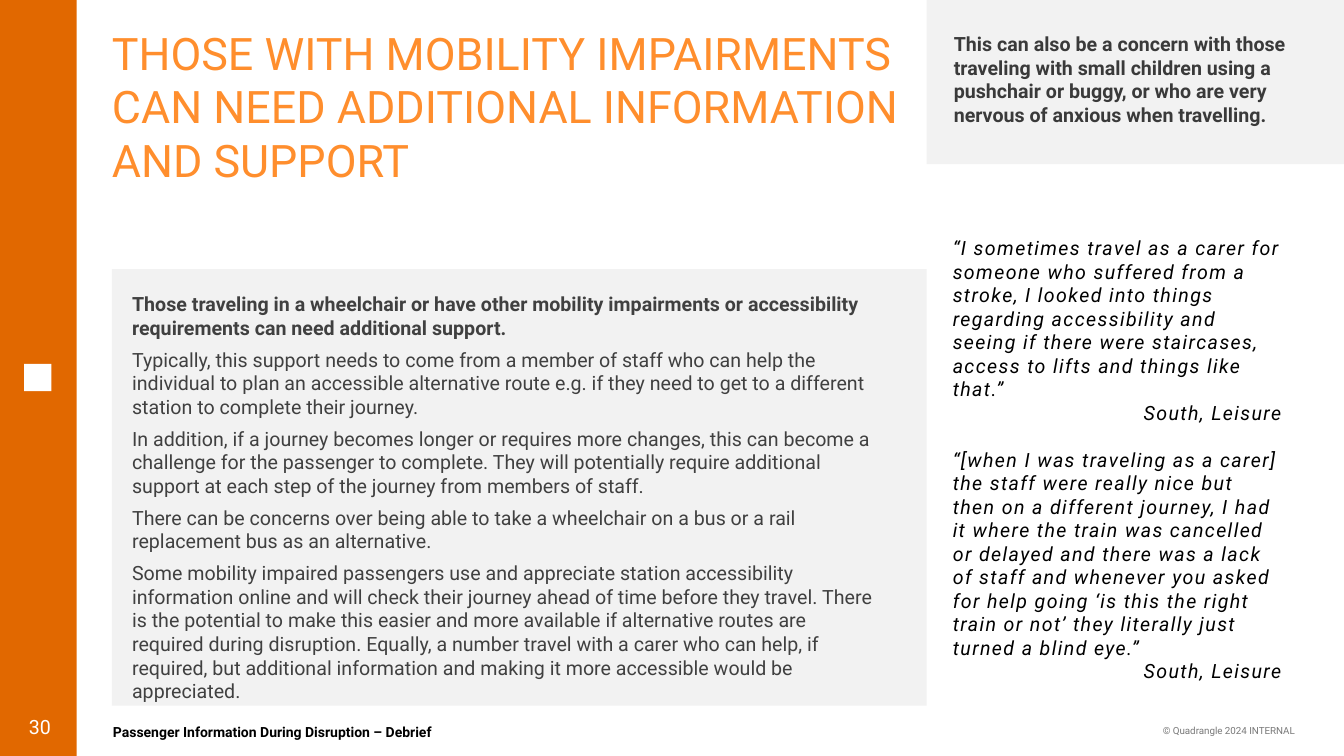
from pptx import Presentation
from pptx.dml.color import RGBColor
from pptx.enum.shapes import MSO_SHAPE
from pptx.enum.text import MSO_ANCHOR, PP_ALIGN
from pptx.util import Inches, Pt

FONT = "Roboto"
COLORS = {
    "orange": "E16800", "title": "FF8E2D", "panel": "F2F2F2", "white": "FFFFFF",
    "black": "000000", "body": "404040", "aside": "3A3A3A", "grey": "797979",
}

TITLE = "THOSE WITH MOBILITY IMPAIRMENTS CAN NEED ADDITIONAL INFORMATION AND SUPPORT"
LEAD = ("Those traveling in a wheelchair or have other mobility impairments or "
        "accessibility requirements can need additional support.")
BODY = [
    "Typically, this support needs to come from a member of staff who can help the "
    "individual to plan an accessible alternative route e.g. if they need to get to a "
    "different station to complete their journey.",
    "In addition, if a journey becomes longer or requires more changes, this can become a "
    "challenge for the passenger to complete. They will potentially require additional "
    "support at each step of the journey from members of staff.",
    "There can be concerns over being able to take a wheelchair on a bus or a rail "
    "replacement bus as an alternative.",
    "Some mobility impaired passengers use and appreciate station accessibility "
    "information online and will check their journey ahead of time before they travel. "
    "There is the potential to make this easier and more available if alternative routes "
    "are required during disruption. Equally, a number travel with a carer who can help, "
    "if required, but additional information and making it more accessible would be "
    "appreciated.",
]
ASIDE = ("This can also be a concern with those traveling with small children using a "
         "pushchair or buggy, or who are very nervous of anxious when travelling.")
QUOTES = [  # top, height, quote, speaker
    (2.34, 1.88,
     "“I sometimes travel as a carer for someone who suffered from a stroke, I looked into "
     "things regarding accessibility and seeing if there were staircases, access to lifts "
     "and things like that.”", "South, Leisure"),
    (4.44, 2.36,
     "“[when I was traveling as a carer] the staff were really nice but then on a different "
     "journey, I had it where the train was cancelled or delayed and there was a lack of "
     "staff and whenever you asked for help going ‘is this the right train or not’ they "
     "literally just turned a blind eye.”", "South, Leisure"),
]
FOOTER = "Passenger Information During Disruption – Debrief"
COPYRIGHT = "© Quadrangle 2024 INTERNAL"
PAGE = "30"

SLIDE_W, SLIDE_H = 13.33, 7.5
BAR_W = 0.76
LEFT = 1.11          # left edge of title, panel and footer
SPLIT = 9.19         # where the main column meets the side column
PANEL_TOP, PANEL_BOTTOM = 2.67, 7.0
MARK = 0.27

prs = Presentation()
prs.slide_width, prs.slide_height = Inches(SLIDE_W), Inches(SLIDE_H)
s = prs.slides.add_slide(prs.slide_layouts[6])


def rgb(name):
    return RGBColor.from_string(COLORS[name])


def add_block(x, y, w, h, color):
    sp = s.shapes.add_shape(MSO_SHAPE.RECTANGLE, Inches(x), Inches(y), Inches(w), Inches(h))
    sp.shadow.inherit = False
    sp.fill.solid()
    sp.fill.fore_color.rgb = rgb(color)
    sp.line.fill.background()


def add_box(x, y, w, h, middle=False, inset=False):
    """Add an empty wrapping text box and return its text frame."""
    tf = s.shapes.add_textbox(Inches(x), Inches(y), Inches(w), Inches(h)).text_frame
    tf.word_wrap = True
    tf.vertical_anchor = MSO_ANCHOR.MIDDLE if middle else MSO_ANCHOR.TOP
    if not inset:
        tf.margin_left = tf.margin_top = tf.margin_right = tf.margin_bottom = 0
    return tf


def write(tf, text, size=14, color="black", bold=False, italic=False,
          align=PP_ALIGN.LEFT, before=0, spacing=0):
    """Write one paragraph; spacing is between letters, in points."""
    p = tf.paragraphs[0]
    if p.runs:
        p = tf.add_paragraph()
    p.alignment = align
    p.space_before = Pt(before)
    r = p.add_run()
    r.text = text
    r.font.name, r.font.size = FONT, Pt(size)
    r.font.bold, r.font.italic = bold, italic
    r.font.color.rgb = rgb(color)
    if spacing:
        r.font._element.set("spc", str(spacing * 100))


add_block(0, 0, BAR_W, SLIDE_H, "orange")
add_block(0.24, 3.61, MARK, MARK, "white")
add_block(LEFT, PANEL_TOP, SPLIT - LEFT, PANEL_BOTTOM - PANEL_TOP, "panel")
add_block(SPLIT, 0, SLIDE_W - SPLIT, 1.63, "panel")

write(add_box(LEFT, 0.25, 7.91, 1.62), TITLE, size=32, color="title")

main = add_box(LEFT + 0.2, 2.9, 7.45, 3.69)
write(main, LEAD, color="body", bold=True)
for text in BODY:
    write(main, text, color="body", before=6)

write(add_box(9.46, 0.32, 3.55, 0.94), ASIDE, color="aside", bold=True)

for top, height, quote, speaker in QUOTES:
    box = add_box(9.45, top, 3.26, height)
    write(box, quote, italic=True, spacing=1)
    write(box, speaker, italic=True, spacing=1, align=PP_ALIGN.RIGHT)

write(add_box(LEFT + 0.01, 7.18, 4.05, 0.17, middle=True), FOOTER, size=10, bold=True)
write(add_box(8.44, 7.14, 4.5, 0.22, middle=True, inset=True), COPYRIGHT,
      size=7, color="grey", align=PP_ALIGN.RIGHT)
write(add_box(0, 7.01, 0.79, 0.39, middle=True, inset=True), PAGE,
      color="white", align=PP_ALIGN.CENTER)

prs.save("out.pptx")
